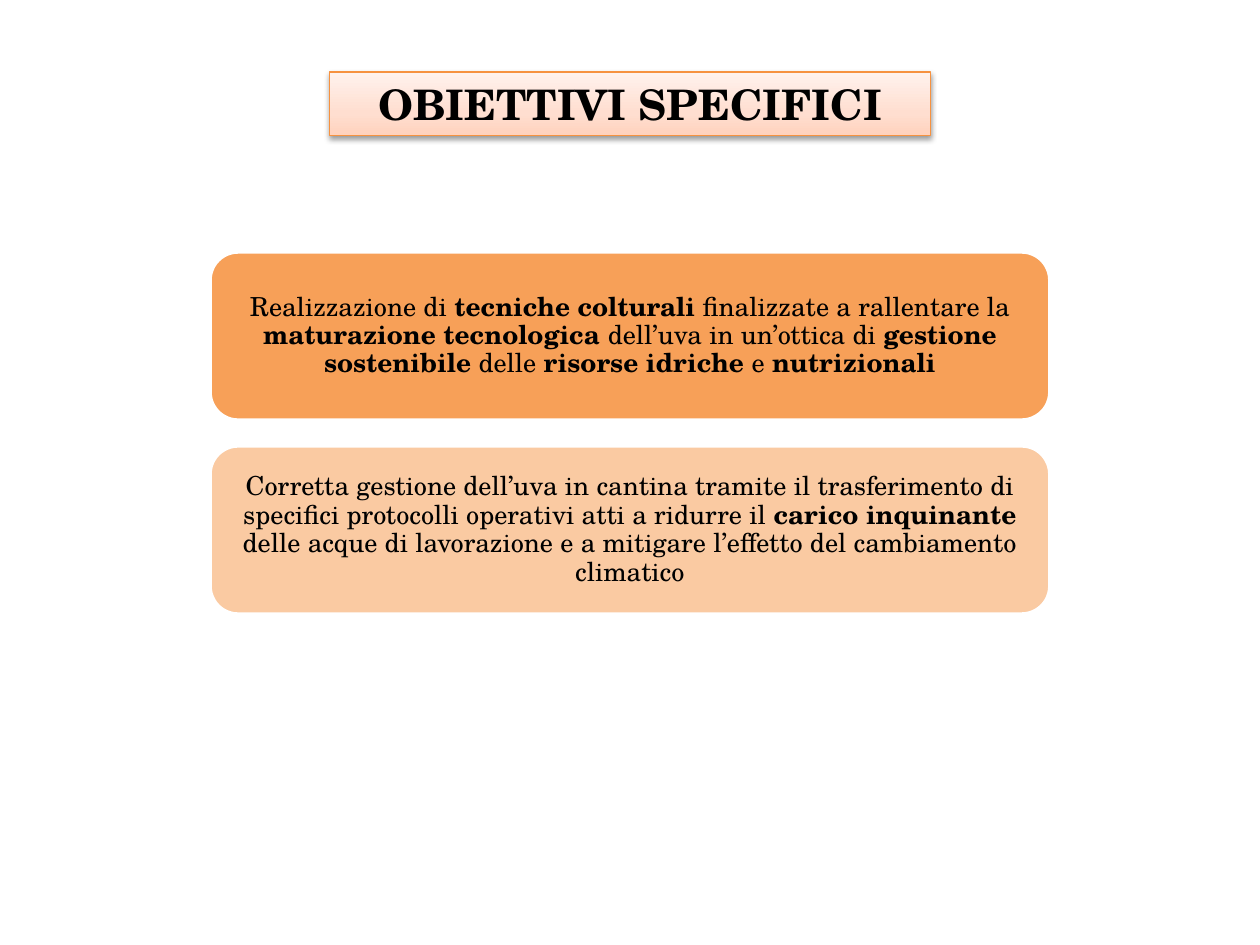
from lxml import etree
from pptx import Presentation, util as u
from pptx.dml.color import RGBColor
from pptx.enum import shapes, text
from pptx.oxml.ns import qn

# Content: runs are (text, bold)
TITLE = [("OBIETTIVI SPECIFICI", True)]
GOALS = [
    (90, [("Realizzazione di ", False), ("tecniche colturali", True),
          (" finalizzate a rallentare la ", False),
          ("maturazione tecnologica ", True),
          ("dell’uva in un’ottica di ", False),
          ("gestione sostenibile", True), (" delle ", False),
          ("risorse idriche", True), (" e ", False), ("nutrizionali", True)]),
    (50, [("Corretta gestione dell’uva in cantina tramite il trasferimento di "
           "specifici protocolli operativi atti a ridurre il ", False),
          ("carico inquinante", True),
          (" delle acque di lavorazione e a mitigare l’effetto del "
           "cambiamento climatico", False)]),
]
COLORS = {"orange": "F79646", "edge": "F69240", "white": "FFFFFF", "black": "000000"}
TITLE_STOPS = [(0, "FFD2BD"), (35, "FFDED0"), (100, "FFF2ED")]
FONT = "TeX Gyre Schola"

# Layout in cm
SLIDE_W, SLIDE_H = 25.4, 19.05
TITLE_W, TITLE_H, TITLE_TOP = 12.12, 1.28, 1.45
BOX_W, BOX_H, BOX_TOP, BOX_GAP = 16.93, 3.39, 5.08, 0.52


def rgb(name):
    return RGBColor.from_string(COLORS[name])


def add_color(parent, value, alpha=None):
    clr = etree.SubElement(parent, qn("a:srgbClr"), val=value)
    if alpha is not None:
        etree.SubElement(clr, qn("a:alpha"), val=str(alpha * 1000))


def write(sp, runs, size, spacing=1.0, inset=None):
    tf = sp.text_frame
    tf.word_wrap = True
    tf.auto_size = text.MSO_AUTO_SIZE.NONE
    tf.vertical_anchor = text.MSO_ANCHOR.MIDDLE
    if inset is not None:
        tf.margin_left = tf.margin_right = u.Cm(inset)
        tf.margin_top = tf.margin_bottom = u.Cm(inset)
    p = tf.paragraphs[0]
    p.alignment = text.PP_ALIGN.CENTER
    p.line_spacing = spacing
    for words, bold in runs:
        r = p.add_run()
        r.text = words
        r.font.name, r.font.size, r.font.bold = FONT, u.Pt(size), bold
        r.font.color.rgb = rgb("black")


def main():
    prs = Presentation()
    prs.slide_width, prs.slide_height = u.Cm(SLIDE_W), u.Cm(SLIDE_H)
    s = prs.slides.add_slide(prs.slide_layouts[5])

    # Title banner with gradient and soft shadow
    sp = s.shapes.title
    sp.left, sp.top = u.Cm((SLIDE_W - TITLE_W) / 2), u.Cm(TITLE_TOP)
    sp.width, sp.height = u.Cm(TITLE_W), u.Cm(TITLE_H)
    sp.fill.gradient()
    sp.fill.gradient_angle = 90
    stops = sp._element.spPr.find(".//" + qn("a:gsLst"))
    stops.clear()
    for pos, value in TITLE_STOPS:
        add_color(etree.SubElement(stops, qn("a:gs"), pos=str(pos * 1000)), value)
    sp.line.color.rgb = rgb("edge")
    sp.line.width = u.Pt(0.75)
    effects = etree.SubElement(sp._element.spPr, qn("a:effectLst"))
    shadow = etree.SubElement(effects, qn("a:outerShdw"), blurRad=str(u.Pt(3.1)),
                              dist=str(u.Pt(1.6)), dir="5400000", rotWithShape="0")
    add_color(shadow, COLORS["black"], 38)
    write(sp, TITLE, 24)

    # Stacked goal boxes, fading downwards
    for i, (alpha, runs) in enumerate(GOALS):
        sp = s.shapes.add_shape(
            shapes.MSO_SHAPE.ROUNDED_RECTANGLE,
            u.Cm((SLIDE_W - BOX_W) / 2), u.Cm(BOX_TOP + i * (BOX_H + BOX_GAP)),
            u.Cm(BOX_W), u.Cm(BOX_H))
        sp.shadow.inherit = False
        sp.fill.solid()
        sp.fill.fore_color.rgb = rgb("orange")
        clr = sp._element.spPr.find(qn("a:solidFill"))[0]
        etree.SubElement(clr, qn("a:alpha"), val=str(alpha * 1000))
        sp.line.color.rgb = rgb("white")
        sp.line.width = u.Pt(2)
        write(sp, runs, 15, spacing=0.9, inset=0.15)

    prs.save("out.pptx")


if __name__ == "__main__":
    main()
